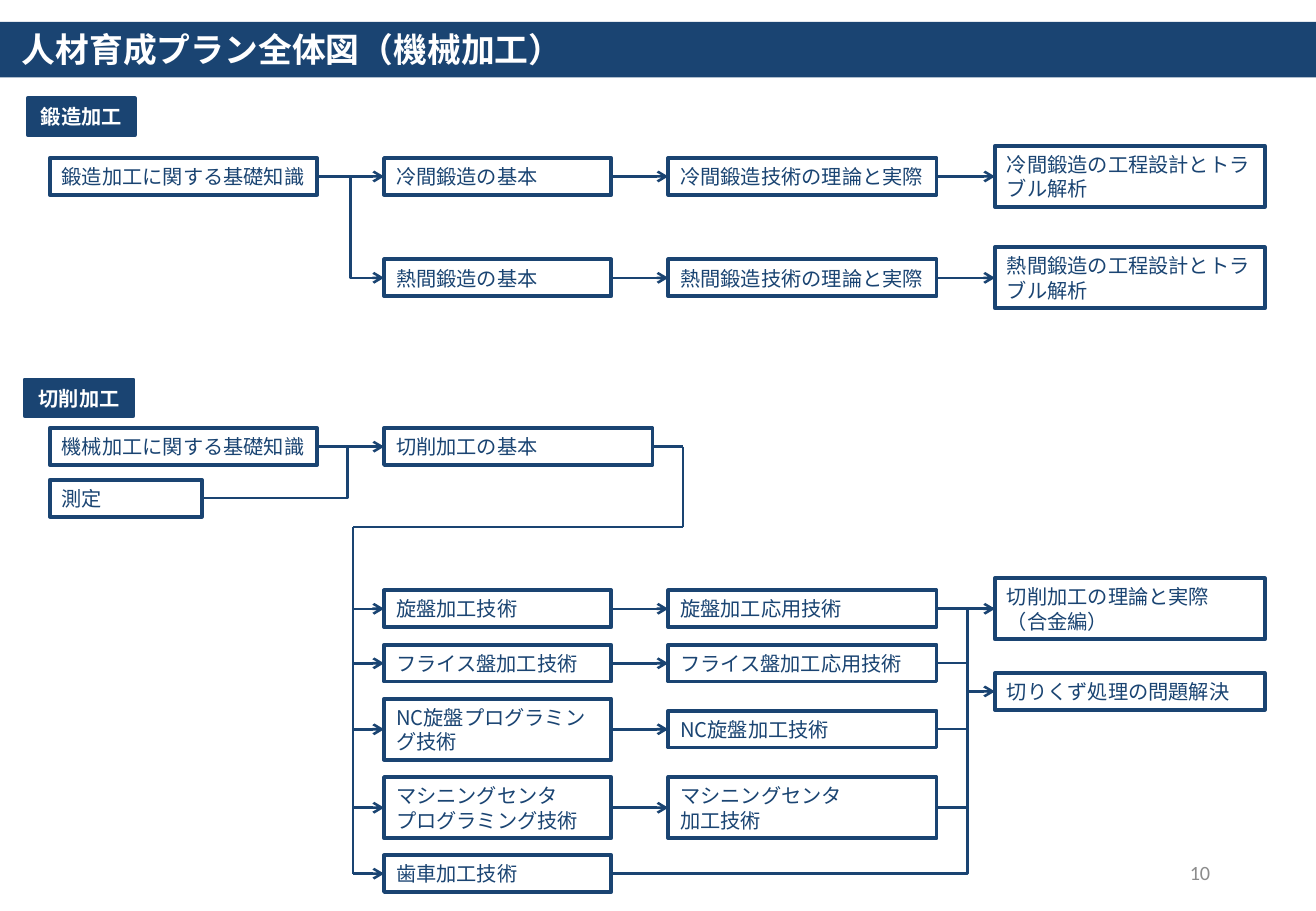
from lxml.etree import SubElement
from pptx import Presentation
from pptx.dml.color import RGBColor
from pptx.enum.shapes import MSO_CONNECTOR as LINK, MSO_SHAPE as SHAPE
from pptx.enum.text import MSO_ANCHOR as ANCHOR, PP_ALIGN as ALIGN
from pptx.oxml.ns import qn
from pptx.util import Cm, Pt

COLORS = {"navy": "1A4472", "white": "FFFFFF", "gray": "8C8C8C"}
FONT = "Noto Sans CJK JP"
TOP, LEFT, BOTTOM, RIGHT = range(4)

# Left edge and usual box width of each stage, in cm
STAGES = {
    "basic": (1.04, 5.59),
    "skill": (8.03, 4.75),
    "applied": (13.97, 5.61),
    "expert": (20.8, 5.64),
}
LINE_HEIGHT = 0.51
SPINE_X = 7.38
MERGE_X = 20.22

# Centre height of each lathe-to-gear row, in cm, with its two courses
CUTTING_ROWS = [
    (12.73, "旋盤加工技術", "旋盤加工応用技術"),
    (13.87, "フライス盤加工技術", "フライス盤加工応用技術"),
    (15.25, "NC旋盤プログラミング技術", "NC旋盤加工技術"),
    (16.89, "マシニングセンタ\nプログラミング技術", "マシニングセンタ\n加工技術"),
]
FORGING_ROWS = [
    (3.69, "冷間鍛造の基本", "冷間鍛造技術の理論と実際", "冷間鍛造の工程設計とトラブル解析"),
    (5.81, "熱間鍛造の基本", "熱間鍛造技術の理論と実際", "熱間鍛造の工程設計とトラブル解析"),
]


def color(name):
    return RGBColor.from_string(COLORS[name])


def write(frame, text, tint="navy", size=12, bold=False, align=ALIGN.LEFT,
          font=FONT, spacing=None):
    frame.word_wrap = True
    frame.vertical_anchor = ANCHOR.MIDDLE
    for index, line in enumerate(text.split("\n")):
        para = frame.add_paragraph() if index else frame.paragraphs[0]
        para.alignment = align
        if spacing:
            para.line_spacing = spacing
        span = para.add_run()
        span.text = line
        span.font.name = font
        span.font.size = Pt(size)
        span.font.bold = bold
        span.font.color.rgb = color(tint)
        SubElement(span.font._element, qn("a:ea"), typeface=font)


def add_box(page, left, middle, width, text, lines=1, solid=False):
    """Outlined box centred on the height `middle`; `solid` makes a section tag."""
    height = lines * LINE_HEIGHT + 0.26
    box = page.shapes.add_shape(SHAPE.RECTANGLE, Cm(left), Cm(middle - height / 2),
                                Cm(width), Cm(height))
    box.shadow.inherit = False
    box.line.color.rgb = color("navy")
    box.line.width = Pt(2.25)
    frame = box.text_frame
    frame.margin_top = frame.margin_bottom = Cm(0.1)
    if solid:
        box.fill.solid()
        box.fill.fore_color.rgb = color("navy")
        frame.margin_left = frame.margin_right = 0
        write(frame, text, "white", bold=True, align=ALIGN.CENTER, spacing=Pt(14.6))
    else:
        box.fill.background()
        frame.margin_left, frame.margin_right = Cm(0.25), Cm(0.13)
        write(frame, text, spacing=Pt(14.6))
    return box


def add_course(page, stage, middle, text, lines=1, width=None):
    left, usual_width = STAGES[stage]
    return add_box(page, left, middle, width or usual_width, text, lines)


def add_line(page, start, end, kind=LINK.STRAIGHT, arrow=False):
    line = page.shapes.add_connector(kind, *map(Cm, start + end))
    line.line.color.rgb = color("navy")
    line.line.width = Pt(1.5)
    if arrow:
        SubElement(line.line._get_or_add_ln(), qn("a:tailEnd"), type="arrow")
    SubElement(line.element.spPr, qn("a:effectLst"))
    return line


def join(page, source, target, bend_x=None, arrow=True):
    """Link right side to left side, straight or with an elbow at `bend_x`."""
    kind = LINK.STRAIGHT if bend_x is None else LINK.ELBOW
    link = add_line(page, (0, 0), (1, 1), kind, arrow)
    link.begin_connect(source, RIGHT)
    link.end_connect(target, LEFT)
    if bend_x is not None:
        share = (Cm(bend_x) - link.begin_x) / (link.end_x - link.begin_x)
        guides = link.element.spPr.find(qn("a:prstGeom")).get_or_add_avLst()
        SubElement(guides, qn("a:gd"), name="adj1", fmla=f"val {round(share * 100000)}")


def add_heading(page, deck):
    band = page.shapes.add_shape(SHAPE.RECTANGLE, 0, Cm(0.46), deck.slide_width, Cm(1.16))
    band.shadow.inherit = False
    band.fill.solid()
    band.fill.fore_color.rgb = color("navy")
    band.line.fill.background()
    title = page.shapes.title
    title.element.addprevious(band.element)
    title.left, title.top, title.width, title.height = Cm(0.2), Cm(0.46), Cm(12.2), Cm(1.14)
    write(title.text_frame, "人材育成プラン全体図（機械加工）", "white", 20, True)


def add_page_number(page):
    box = page.shapes.add_textbox(Cm(19.35), Cm(17.73), Cm(6.2), Cm(1.02))
    write(box.text_frame, "10", "gray", align=ALIGN.RIGHT, font="Calibri")


def add_forging(page):
    add_box(page, 0.58, 2.44, 2.24, "鍛造加工", solid=True)
    basics = add_course(page, "basic", 3.69, "鍛造加工に関する基礎知識")
    for index, (middle, skill_text, applied_text, expert_text) in enumerate(FORGING_ROWS):
        skill = add_course(page, "skill", middle, skill_text)
        applied = add_course(page, "applied", middle, applied_text)
        expert = add_course(page, "expert", middle, expert_text, lines=2)
        join(page, basics, skill, bend_x=7.33 if index else None)
        join(page, skill, applied)
        join(page, applied, expert)


def add_cutting(page):
    add_box(page, 0.52, 8.32, 2.27, "切削加工", solid=True)
    basics = add_course(page, "basic", 9.34, "機械加工に関する基礎知識")
    measuring = add_course(page, "basic", 10.42, "測定", width=3.18)
    cutting = add_course(page, "skill", 9.34, "切削加工の基本", width=5.61)
    join(page, basics, cutting)
    join(page, measuring, cutting, bend_x=7.26, arrow=False)

    theory = add_course(page, "expert", 12.73, "切削加工の理論と実際\n（合金編）", lines=2)
    chips = add_course(page, "expert", 14.46, "切りくず処理の問題解決")
    skills = []
    for index, (middle, skill_text, applied_text) in enumerate(CUTTING_ROWS):
        skill_lines = 2 if len(skill_text) > 10 else 1
        applied_lines = applied_text.count("\n") + 1
        skill = add_course(page, "skill", middle, skill_text, skill_lines)
        applied = add_course(page, "applied", middle, applied_text, applied_lines)
        join(page, skill, applied)
        join(page, applied, theory, MERGE_X if index else None, arrow=not index)
        if not index:
            join(page, applied, chips, MERGE_X)
        skills.append(skill)
    gear = add_course(page, "skill", 18.27, "歯車加工技術")
    join(page, gear, theory, MERGE_X, arrow=False)
    add_spine(page, cutting, skills + [gear])


def add_spine(page, source, targets):
    """Lead from the source round to a vertical line that feeds every target."""
    route = [(13.64, 9.34), (14.28, 9.34), (14.28, 11.02), (SPINE_X, 11.02), (SPINE_X, 18.27)]
    for index, (start, end) in enumerate(zip(route, route[1:])):
        line = add_line(page, start, end)
        if not index:
            line.begin_connect(source, RIGHT)
    for target in targets:
        middle = (target.top + target.height / 2) / Cm(1)
        branch = add_line(page, (SPINE_X, middle), (STAGES["skill"][0], middle), arrow=True)
        branch.end_connect(target, LEFT)


def main():
    deck = Presentation()
    deck.slide_width, deck.slide_height = Cm(27.51), Cm(19.05)
    page = deck.slides.add_slide(deck.slide_layouts[5])
    add_heading(page, deck)
    add_forging(page)
    add_cutting(page)
    add_page_number(page)
    deck.save("out.pptx")


if __name__ == "__main__":
    main()
